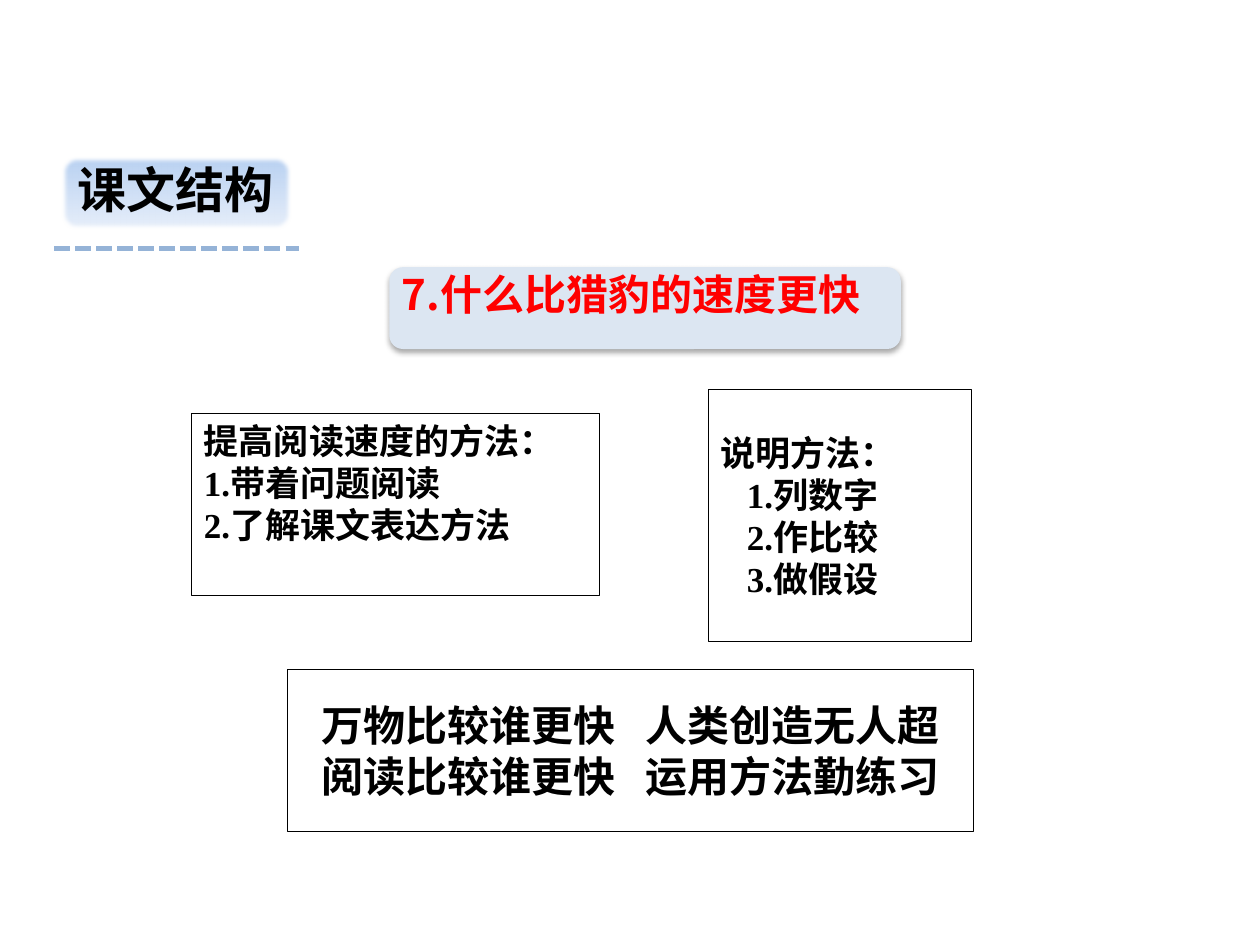
from lxml import etree
from pptx import Presentation
from pptx.dml.color import RGBColor
from pptx.enum.dml import MSO_LINE
from pptx.enum.shapes import MSO_CONNECTOR, MSO_SHAPE
from pptx.enum.text import MSO_ANCHOR, MSO_AUTO_SIZE, PP_ALIGN
from pptx.oxml import parse_xml
from pptx.oxml.ns import nsdecls, qn
from pptx.util import Inches, Pt

BLACK = RGBColor(0x00, 0x00, 0x00)
RED = RGBColor(0xFF, 0x00, 0x00)
PALE_BLUE = RGBColor(0xDC, 0xE6, 0xF2)
DASH_BLUE = RGBColor(0x95, 0xB3, 0xD7)
BADGE_TOP = RGBColor(0xB7, 0xD0, 0xF1)
BADGE_BOTTOM = RGBColor(0xE8, 0xEF, 0xFA)

CJK_FONT = "Noto Sans CJK SC"
BODY_FONT = "Times New Roman"

SOFT_EDGE = '<a:softEdge rad="31750"/>'
DROP_SHADOW = (
    '<a:outerShdw blurRad="39370" dist="22860" dir="5400000" rotWithShape="0">'
    '<a:srgbClr val="000000"><a:alpha val="35000"/></a:srgbClr></a:outerShdw>'
)


def set_effects(shape, effect=""):
    """Replace the theme effects with the given effect XML, or with none."""
    properties = shape._element.spPr
    for old in properties.findall(qn("a:effectLst")):
        properties.remove(old)
    properties.append(parse_xml(f'<a:effectLst {nsdecls("a")}>{effect}</a:effectLst>'))


def add_span(para, text, size, font=BODY_FONT, color=BLACK):
    span = para.add_run()
    span.text = text
    span.font.name = font
    span.font.size = Pt(size)
    span.font.bold = True
    span.font.color.rgb = color
    east_asian = etree.SubElement(span._r.get_or_add_rPr(), qn("a:ea"))
    east_asian.set("typeface", CJK_FONT)


def add_panel(page, kind, left, top, width, height):
    panel = page.shapes.add_shape(
        kind, Inches(left), Inches(top), Inches(width), Inches(height))
    panel.shadow.inherit = False
    panel.line.fill.background()
    return panel


def add_badge(page, text):
    badge = add_panel(page, MSO_SHAPE.ROUNDED_RECTANGLE, 0.49, 1.24, 1.82, 0.58)
    badge.fill.gradient()
    badge.fill.gradient_angle = 270
    for stop, color in zip(badge.fill.gradient_stops, (BADGE_TOP, BADGE_BOTTOM)):
        stop.color.rgb = color
    stops = badge.fill.gradient_stops
    stops[0].position, stops[1].position = 0, 1
    set_effects(badge, SOFT_EDGE)
    frame = badge.text_frame
    frame.word_wrap = False
    frame.vertical_anchor = MSO_ANCHOR.TOP
    para = frame.paragraphs[0]
    para.alignment = PP_ALIGN.LEFT
    para.line_spacing = 0.9
    add_span(para, text, 28, CJK_FONT)


def add_dashed_rule(page):
    rule = page.shapes.add_connector(
        MSO_CONNECTOR.STRAIGHT, Inches(0.43), Inches(1.97), Inches(2.37), Inches(1.97))
    rule.line.color.rgb = DASH_BLUE
    rule.line.width = Pt(3)
    rule.line.dash_style = MSO_LINE.SQUARE_DOT
    set_effects(rule)


def add_lesson_title(page, text):
    panel = add_panel(page, MSO_SHAPE.ROUNDED_RECTANGLE, 3.09, 2.12, 4.06, 0.65)
    panel.fill.solid()
    panel.fill.fore_color.rgb = PALE_BLUE
    set_effects(panel, DROP_SHADOW)

    title = page.shapes.title
    title.left, title.top = Inches(3.02), Inches(2.08)
    title.width, title.height = Inches(4.1), Inches(0.91)
    panel._element.addnext(title._element)  # the title lies over its panel
    frame = title.text_frame
    frame.auto_size = MSO_AUTO_SIZE.NONE
    frame.vertical_anchor = MSO_ANCHOR.TOP
    frame.margin_left = Inches(0.17)
    para = frame.paragraphs[0]
    para.alignment = PP_ALIGN.LEFT
    add_span(para, text, 24, CJK_FONT, RED)


def add_text_box(page, place, lines, size=20, anchor=MSO_ANCHOR.MIDDLE,
                 inset=0.1, item_indent=0, tab=None):
    """Outlined box; item_indent applies to every line after the first."""
    box = add_panel(page, MSO_SHAPE.RECTANGLE, *place)
    box.fill.background()
    box.line.color.rgb = BLACK
    box.line.width = Pt(0.5)
    frame = box.text_frame
    frame.word_wrap = True
    frame.vertical_anchor = anchor
    frame.margin_left = Inches(inset)
    for index, line in enumerate(lines):
        para = frame.add_paragraph() if index else frame.paragraphs[0]
        para.alignment = PP_ALIGN.LEFT if tab else PP_ALIGN.JUSTIFY
        properties = para._p.get_or_add_pPr()
        if index and item_indent:
            properties.set("marL", str(Inches(item_indent)))
        if tab:
            tabs = etree.SubElement(properties, qn("a:tabLst"))
            etree.SubElement(tabs, qn("a:tab"), pos=str(Inches(tab)), algn="l")
        add_span(para, line, size)


def main():
    deck = Presentation()
    deck.slide_width, deck.slide_height = Inches(10), Inches(7.5)
    page = deck.slides.add_slide(deck.slide_layouts[5])

    add_badge(page, "课文结构")
    add_dashed_rule(page)
    add_lesson_title(page, "7.什么比猎豹的速度更快")
    add_text_box(page, (1.52, 3.28, 3.24, 1.45),
                 ["提高阅读速度的方法：", "1.带着问题阅读", "2.了解课文表达方法"],
                 anchor=MSO_ANCHOR.TOP)
    add_text_box(page, (5.62, 3.09, 2.09, 2),
                 ["说明方法：", "1.列数字", "2.作比较", "3.做假设"],
                 item_indent=0.21)
    add_text_box(page, (2.28, 5.31, 5.45, 1.29),
                 ["万物比较谁更快\t人类创造无人超", "阅读比较谁更快\t运用方法勤练习"],
                 size=24, inset=0.27, tab=2.57)
    deck.save("out.pptx")


if __name__ == "__main__":
    main()
